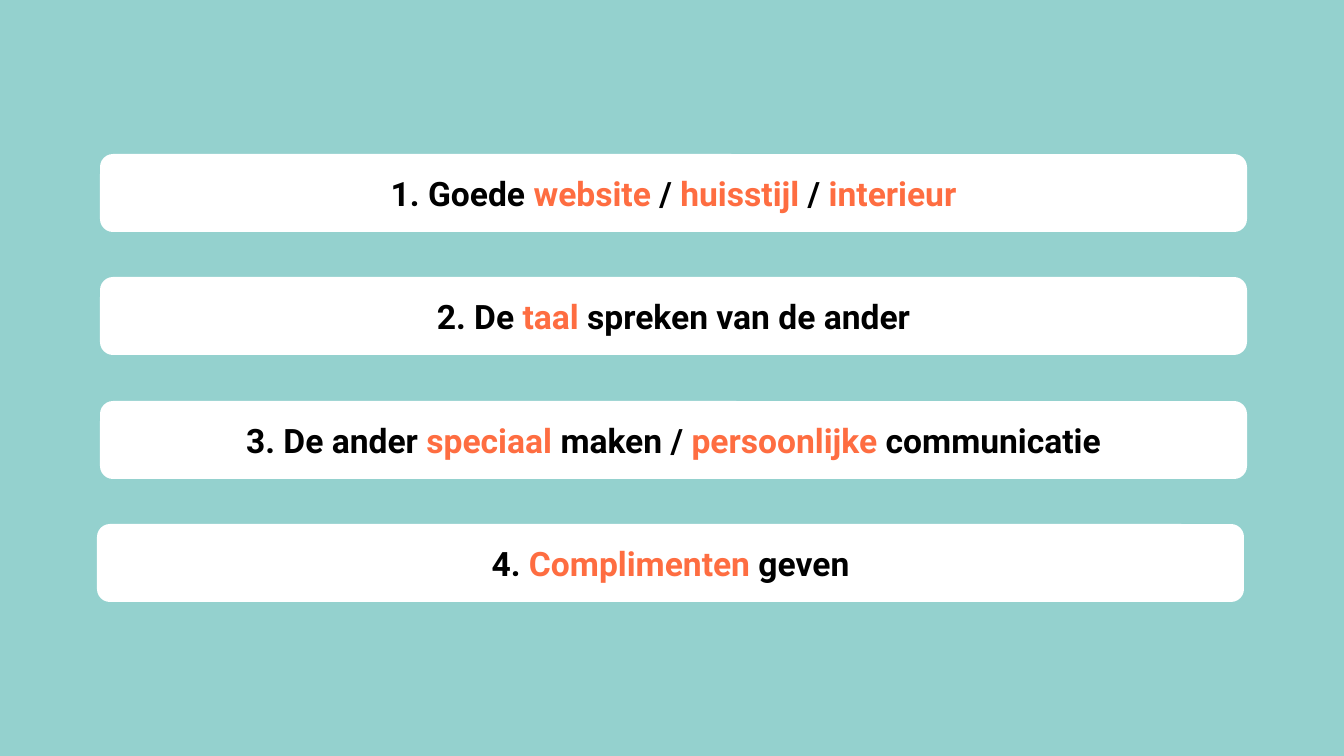
import pptx
import pptx.dml.color
import pptx.enum.shapes
import pptx.enum.text
import pptx.util

WIDTH, HEIGHT = 1344, 756
EMU_PER_PX = 12192000 / WIDTH

BACKGROUND = "94D1CE"
WHITE = "FFFFFF"
BLACK = "000000"
ORANGE = "FE6D41"

BAR_LEFT, BAR_TOP, BAR_WIDTH, BAR_HEIGHT = 100, 154, 1147, 78
LAST_BAR_LEFT = 97
TWO_BAR_PITCH = 247

# Each bar alternates black and orange runs, starting with black.
BARS = [
    ["1. Goede ", "website", " / ", "huisstijl", " / ", "interieur"],
    ["2. De ", "taal", " spreken van de ander"],
    ["3. De ander ", "speciaal", " maken / ", "persoonlijke", " communicatie"],
    ["4. ", "Complimenten", " geven"],
]


def px(length):
    return pptx.util.Emu(round(length * EMU_PER_PX))


def color(hex_string):
    return pptx.dml.color.RGBColor.from_string(hex_string)


class SlideBuilder:
    """Holds the text style and the current slide."""

    font_name = "Roboto"
    font_size = 24

    def __init__(self, slide):
        self.slide = slide

    def background(self, fill):
        self.slide.background.fill.solid()
        self.slide.background.fill.fore_color.rgb = color(fill)

    def bar(self, left, top, width, height, texts):
        shape = self.slide.shapes.add_shape(
            pptx.enum.shapes.MSO_SHAPE.ROUNDED_RECTANGLE,
            px(left), px(top), px(width), px(height))
        shape.shadow.inherit = False
        shape.fill.solid()
        shape.fill.fore_color.rgb = color(WHITE)
        shape.line.fill.background()
        shape.text_frame.word_wrap = True
        shape.text_frame.vertical_anchor = pptx.enum.text.MSO_ANCHOR.MIDDLE
        paragraph = shape.text_frame.paragraphs[0]
        paragraph.alignment = pptx.enum.text.PP_ALIGN.CENTER
        for index, text in enumerate(texts):
            self.run(paragraph, text, ORANGE if index % 2 else BLACK)

    def run(self, paragraph, text, text_color):
        run = paragraph.add_run()
        run.text = text
        run.font.name = self.font_name
        run.font.size = pptx.util.Pt(self.font_size)
        run.font.bold = True
        run.font.color.rgb = color(text_color)


def main():
    presentation = pptx.Presentation()
    presentation.slide_width = px(WIDTH)
    presentation.slide_height = px(HEIGHT)
    blank_layout = presentation.slide_layouts[6]
    builder = SlideBuilder(presentation.slides.add_slide(blank_layout))
    builder.background(BACKGROUND)
    for index, texts in enumerate(BARS):
        left = LAST_BAR_LEFT if index == len(BARS) - 1 else BAR_LEFT
        top = BAR_TOP + index * TWO_BAR_PITCH // 2
        builder.bar(left, top, BAR_WIDTH, BAR_HEIGHT, texts)
    presentation.save("out.pptx")


if __name__ == "__main__":
    main()
